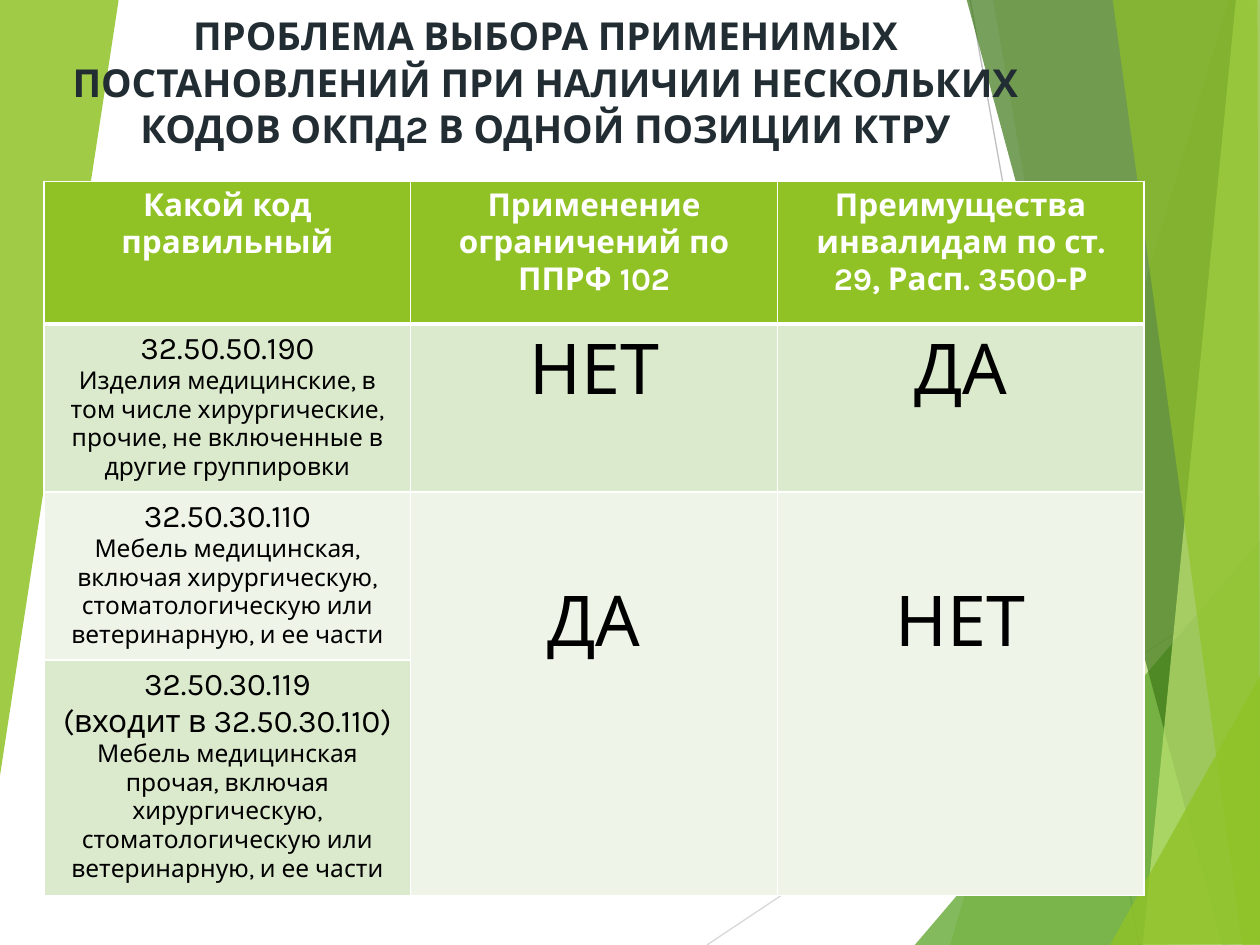
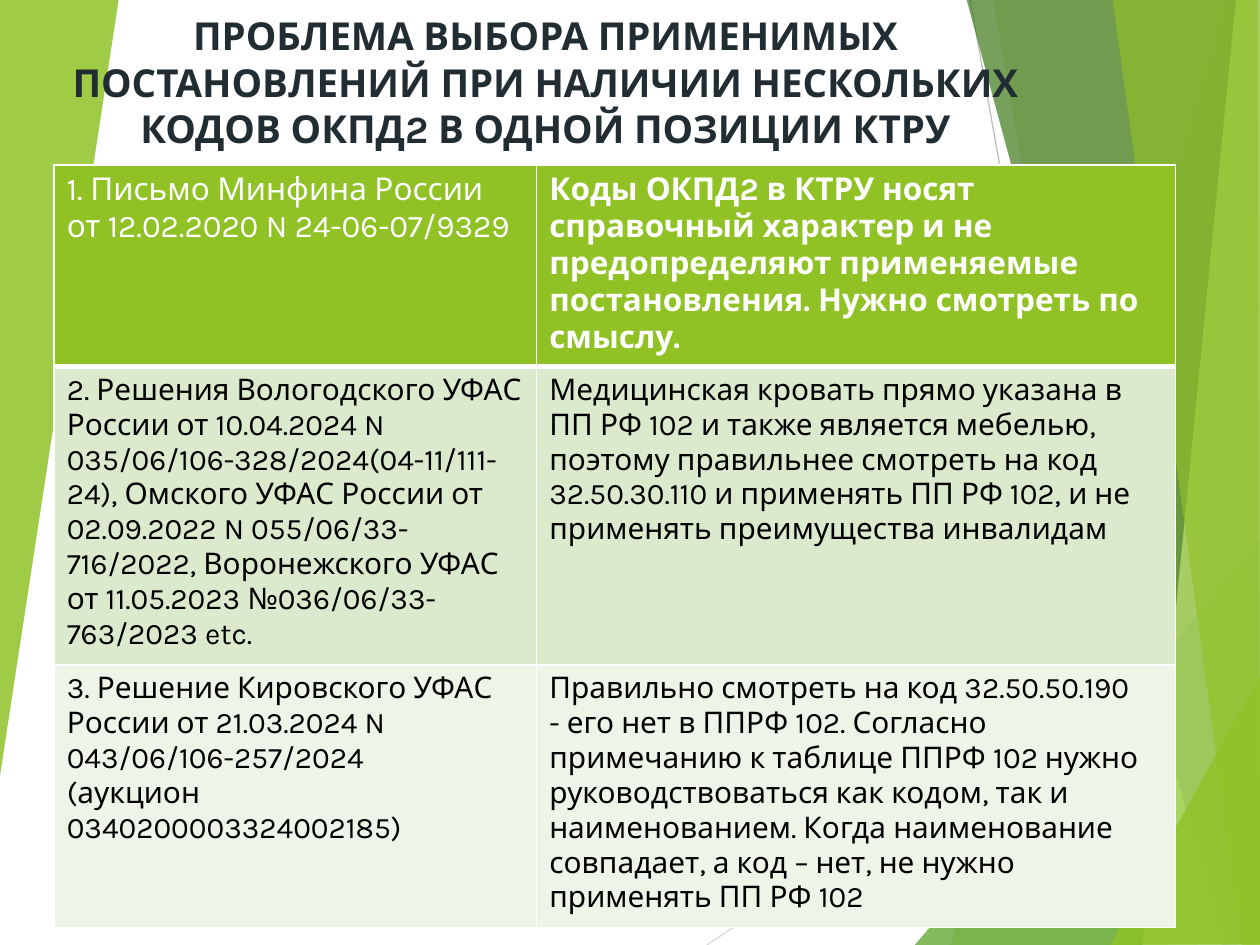
from lxml.etree import SubElement
from pptx import Presentation
from pptx.dml.color import RGBColor
from pptx.enum.shapes import MSO_CONNECTOR as Connector
from pptx.enum.text import PP_ALIGN as Align
from pptx.oxml.ns import qn
from pptx.util import Pt

PX = 9144
WIDTH, HEIGHT = 1000, 750
FONT = "Karla"
WHITE, BLACK, INK = "FFFFFF", "000000", "212D32"
GREEN, LEAF, FOREST, LIME = "90C226", "54A021", "3F7819", "C0E474"
HEADER_FILL, BAND_FILLS = GREEN, ("DBE9CD", "EEF4E8")

TITLE = ("ПРОБЛЕМА ВЫБОРА ПРИМЕНИМЫХ ПОСТАНОВЛЕНИЙ ПРИ НАЛИЧИИ "
         "НЕСКОЛЬКИХ КОДОВ ОКПД2 В ОДНОЙ ПОЗИЦИИ КТРУ")

RAYS = [
    ((561, 750), (1001, 457), "D9D9D9"),
    ((770, 0), (904, 750), "BFBFBF"),
]
FACETS = [
    (GREEN, 30, [(975, 0), (754, 750), (1002, 751), (1001, 1)]),
    (GREEN, 20, [(788, -1), (919, 750), (1001, 750), (1001, -1)]),
    (LEAF, 72, [(726, 750), (1000, 429), (1001, 750)]),
    (FOREST, 70, [(767, -1), (970, 750), (1001, 749), (1001, -1)]),
    (LIME, 70, [(981, -1), (907, 750), (1001, 750), (1000, -1)]),
    (GREEN, 65, [(883, -1), (986, 750), (1000, 750), (998, -1)]),
    (GREEN, 80, [(881, 750), (1001, 535), (1001, 749)]),
    (GREEN, 85, [(-1, 0), (94, -1), (94, 1), (-1, 622)]),
]

HEADING = {"size": Pt(18), "bold": True, "color": WHITE}
SOURCE = {"size": Pt(18), "bold": False, "color": WHITE}
CODE = {"size": Pt(18), "bold": False, "color": BLACK}
DETAIL = {**CODE, "size": Pt(14)}
VERDICT = {**CODE, "size": Pt(40)}
RULING = {**CODE, "size": Pt(17)}

CODE_ROWS = [
    [[("Какой код правильный", HEADING)],
     [("Применение ограничений по ППРФ 102", HEADING)],
     [("Преимущества инвалидам по ст. 29, Расп. 3500-Р", HEADING)]],
    [[("32.50.50.190", CODE),
      ("Изделия медицинские, в том числе хирургические, прочие, "
       "не включенные в другие группировки", DETAIL)],
     [("НЕТ", VERDICT)],
     [("ДА", VERDICT)]],
    [[("32.50.30.110", CODE),
      ("Мебель медицинская, включая хирургическую, "
       "стоматологическую или ветеринарную, и ее части", DETAIL)],
     [("ДА", VERDICT)],
     [("НЕТ", VERDICT)]],
    [[("32.50.30.119", CODE),
      ("(входит в 32.50.30.110)", CODE),
      ("Мебель медицинская прочая, включая хирургическую, "
       "стоматологическую или ветеринарную, и ее части", DETAIL)],
     [], []],
]
RULING_ROWS = [
    [[("1. Письмо Минфина России от 12.02.2020 N 24-06-07/9329", SOURCE)],
     [("Коды ОКПД2 в КТРУ носят справочный характер и не предопределяют "
       "применяемые постановления. Нужно смотреть по смыслу.", HEADING)]],
    [[("2. Решения Вологодского УФАС России от 10.04.2024 N "
       "035/06/106-328/2024(04-11/111-24), Омского УФАС России от "
       "02.09.2022 N 055/06/33-716/2022, Воронежского УФАС от "
       "11.05.2023 №036/06/33- 763/2023 etc.", RULING)],
     [("Медицинская кровать прямо указана в ПП РФ 102 и также является "
       "мебелью, поэтому правильнее смотреть на код 32.50.30.110 и "
       "применять ПП РФ 102, и не применять преимущества инвалидам", RULING)]],
    [[("3. Решение Кировского УФАС России от 21.03.2024 N "
       "043/06/106-257/2024", RULING),
      ("(аукцион 0340200003324002185)", RULING)],
     [("Правильно смотреть на код 32.50.50.190", RULING),
      ("- его нет в ППРФ 102. Согласно примечанию к таблице ППРФ 102 нужно "
       "руководствоваться как кодом, так и наименованием. Когда "
       "наименование совпадает, а код – нет, не нужно применять ПП РФ 102",
       RULING)]],
]


def px(*lengths):
    return [length * PX for length in lengths]


def rgb(color):
    return RGBColor.from_string(color)


def draw_ray(slide, start, end, color):
    ray = slide.shapes.add_connector(Connector.STRAIGHT, *px(*start, *end))
    ray.line.color.rgb = rgb(color)
    ray.line.width = Pt(0.75)
    SubElement(ray._element.spPr, qn("a:effectLst"))


def draw_facet(slide, color, opacity, corners):
    outline = slide.shapes.build_freeform(*corners[0], scale=PX)
    outline.add_line_segments(corners[1:], close=True)
    facet = outline.convert_to_shape()
    facet.shadow.inherit = False
    facet.line.fill.background()
    facet.fill.solid()
    facet.fill.fore_color.rgb = rgb(color)
    tint = facet._element.spPr.find(".//" + qn("a:srgbClr"))
    SubElement(tint, qn("a:alpha"), val=str(opacity * 1000))


def write(frame, paragraphs, align):
    for index, (text, style) in enumerate(paragraphs):
        paragraph = frame.add_paragraph() if index else frame.paragraphs[0]
        paragraph.alignment = align
        run = paragraph.add_run()
        run.text = text
        run.font.name = FONT
        for name, value in style.items():
            if name == "color":
                run.font.color.rgb = rgb(value)
            else:
                setattr(run.font, name, value)


def add_title(slide):
    title = slide.shapes.add_textbox(*px(43, 5, 780, 139)).text_frame
    title.word_wrap = True
    style = {"size": Pt(22), "bold": True, "color": INK}
    write(title, [(TITLE, style)], Align.CENTER)


def border_cell(cell, widths):
    properties = cell._tc.get_or_add_tcPr()
    for side, width in widths.items():
        edge = SubElement(properties, qn("a:ln" + side), w=str(Pt(width)))
        paint = SubElement(edge, qn("a:solidFill"))
        SubElement(paint, qn("a:srgbClr"), val=WHITE)


def add_grid(slide, corner, widths, heights, rows, align):
    size = sum(widths), sum(heights)
    grid = slide.shapes.add_table(len(rows), len(widths),
                                  *px(*corner, *size)).table
    grid.horz_banding = False
    for column, width in zip(grid.columns, px(*widths)):
        column.width = width
    for row, height in zip(grid.rows, px(*heights)):
        row.height = height
    for r, row in enumerate(rows):
        fill = BAND_FILLS[(r - 1) % 2] if r else HEADER_FILL
        for c, paragraphs in enumerate(row):
            cell = grid.cell(r, c)
            border_cell(cell, {"L": 1, "R": 1, "T": 3 if r == 1 else 1,
                               "B": 1 if r else 3})
            cell.fill.solid()
            cell.fill.fore_color.rgb = rgb(fill)
            write(cell.text_frame, paragraphs, align)
    return grid


def add_slide(deck):
    slide = deck.slides.add_slide(deck.slide_layouts[6])
    for ray in RAYS:
        draw_ray(slide, *ray)
    for facet in FACETS:
        draw_facet(slide, *facet)
    add_title(slide)
    return slide


def main():
    deck = Presentation()
    deck.slide_width, deck.slide_height = px(WIDTH, HEIGHT)

    codes = add_grid(add_slide(deck), (35, 144), [291] * 3,
                     [113, 130, 130, 182], CODE_ROWS, Align.CENTER)
    for column in (1, 2):
        verdict = codes.cell(2, column)
        verdict.merge(codes.cell(3, column))
        verdict.margin_top = 72 * PX

    add_grid(add_slide(deck), (43, 131), [383, 507],
             [156, 232, 203], RULING_ROWS, Align.LEFT)
    deck.save("out.pptx")


if __name__ == "__main__":
    main()
